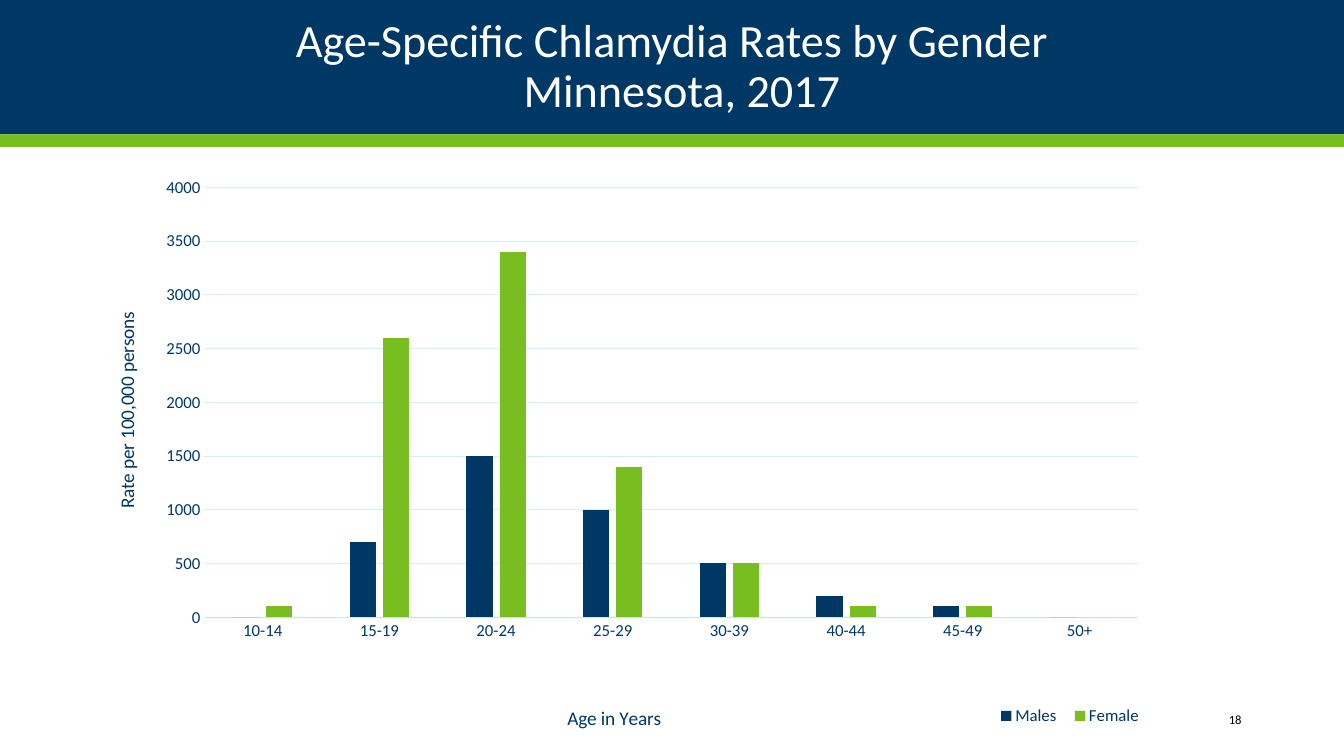
"""Build the slide on age-specific chlamydia rates by gender."""
from dataclasses import dataclass

from lxml import etree
from pptx import Presentation
from pptx.chart.data import CategoryChartData
from pptx.dml.color import RGBColor
from pptx.enum.chart import XL_CHART_TYPE, XL_LEGEND_POSITION, XL_TICK_MARK
from pptx.enum.shapes import MSO_SHAPE
from pptx.enum.text import MSO_ANCHOR, PP_ALIGN
from pptx.oxml.ns import qn
from pptx.util import Inches, Pt

CLUSTERED = XL_CHART_TYPE.COLUMN_CLUSTERED
LEGEND_BOTTOM = XL_LEGEND_POSITION.BOTTOM
NO_TICK = XL_TICK_MARK.NONE
RECTANGLE = MSO_SHAPE.RECTANGLE
MIDDLE = MSO_ANCHOR.MIDDLE
CENTER, RIGHT = PP_ALIGN.CENTER, PP_ALIGN.RIGHT

CELL = Inches(1 / 12)
COLUMNS, ROWS = 160, 90
FONT = "Calibri"
NAVY, GREEN, WHITE, BLACK = "003865", "78BE21", "FFFFFF", "000000"
AXIS_BLUE, GRID_BLUE = "C2E4FF", "D6EDFF"


@dataclass(frozen=True)
class Area:
    """Place on the slide in grid columns and rows."""
    column: float
    row: float
    columns: float
    rows: float

    def box(self) -> tuple:
        return tuple(round(n * CELL) for n in (self.column, self.row, self.columns, self.rows))


@dataclass(frozen=True)
class Band:
    area: Area
    color: str


@dataclass(frozen=True)
class Line:
    words: str
    indent: float = 0


@dataclass(frozen=True)
class Caption:
    area: Area
    lines: tuple
    size: float
    color: str
    align: PP_ALIGN


@dataclass(frozen=True)
class Gender:
    name: str
    rates: tuple
    color: str


BANDS = (
    Band(Area(0, 0, COLUMNS, 16), NAVY),
    Band(Area(0, 16, COLUMNS, 1.5), GREEN),
)
CAPTIONS = (
    Caption(Area(11, 2, 138, 12),
            (Line("Age-Specific Chlamydia Rates by Gender"), Line("Minnesota, 2017", 0.2)),
            33, WHITE, CENTER),
    Caption(Area(129.8, 83.4, 19.2, 4.8), (Line("18"),), 9, BLACK, RIGHT),
)
CHART_AREA = Area(11, 19.8, 127, 68.3)
AGES = ("10-14", "15-19", "20-24", "25-29", "30-39", "40-44", "45-49", "50+")
GENDERS = (
    Gender("Males", (0, 700, 1500, 1000, 500, 200, 100, 0), NAVY),
    Gender("Female", (100, 2600, 3400, 1400, 500, 100, 100, 0), GREEN),
)


def rgb(color: str) -> RGBColor:
    return RGBColor.from_string(color)


def style_font(font, size: float, color: str) -> None:
    font.name, font.size, font.bold = FONT, Pt(size), False
    font.color.rgb = rgb(color)


def style_line(line, color: str) -> None:
    line.color.rgb = rgb(color)
    line.width = Pt(0.75)


def draw_band(slide, band: Band) -> None:
    stripe = slide.shapes.add_shape(RECTANGLE, *band.area.box())
    stripe.shadow.inherit = False
    stripe.fill.solid()
    stripe.fill.fore_color.rgb = rgb(band.color)
    stripe.line.fill.background()


def draw_caption(slide, caption: Caption) -> None:
    frame = slide.shapes.add_textbox(*caption.area.box()).text_frame
    frame.word_wrap = True
    frame.vertical_anchor = MIDDLE
    for number, line in enumerate(caption.lines):
        paragraph = frame.add_paragraph() if number else frame.paragraphs[0]
        paragraph.text = line.words
        paragraph.alignment = caption.align
        paragraph.line_spacing = 0.9
        style_font(paragraph.font, caption.size, caption.color)
        if line.indent:
            paragraph._p.get_or_add_pPr().set("marL", str(Inches(line.indent)))


def place(part, **shares: float) -> None:
    """Set a chart part's place as shares of the chart's size."""
    for old in part.findall(qn("c:layout")):
        part.remove(old)
    layout = etree.Element(qn("c:layout"))
    manual = etree.SubElement(layout, qn("c:manualLayout"))
    settings = {"xMode": "edge", "yMode": "edge", **shares}
    if part.tag == qn("c:plotArea"):
        settings = {"layoutTarget": "inner", **settings}
    for key, setting in settings.items():
        etree.SubElement(manual, qn(f"c:{key}")).set("val", str(setting))
    overlay = part.find(qn("c:overlay"))
    part.insert(0 if overlay is None else part.index(overlay), layout)


def style_axis(axis, title: str, x: float, y: float) -> None:
    axis.major_tick_mark = axis.minor_tick_mark = NO_TICK
    style_font(axis.tick_labels.font, 12, NAVY)
    frame = axis.axis_title.text_frame
    frame.text = title
    style_font(frame.paragraphs[0].font, 13.8, NAVY)
    place(axis.axis_title._element, x=x, y=y)


def draw_chart(slide) -> None:
    rates = CategoryChartData(number_format="General")
    rates.categories = AGES
    for gender in GENDERS:
        rates.add_series(gender.name, gender.rates)
    chart = slide.shapes.add_chart(CLUSTERED, *CHART_AREA.box(), rates).chart
    chart.has_title = False
    style_font(chart.font, 10, NAVY)

    columns = chart.plots[0]
    columns.gap_width, columns.overlap = 219, -27
    columns.vary_by_categories = False
    for series, gender in zip(columns.series, GENDERS):
        series.format.fill.solid()
        series.format.fill.fore_color.rgb = rgb(gender.color)
        series.invert_if_negative = False
    place(chart._chartSpace.chart.plotArea, x=0.105, y=0.037, w=0.875, h=0.749)

    ages, rate_axis = chart.category_axis, chart.value_axis
    style_axis(ages, "Age in Years", 0.442, 0.934)
    style_line(ages.format.line, AXIS_BLUE)
    style_axis(rate_axis, "Rate per 100,000 persons", 0.017, 0.248)
    turned = rate_axis.axis_title.text_frame._txBody.bodyPr
    turned.set("rot", "-5400000")
    turned.set("vert", "horz")
    rate_axis.minimum_scale, rate_axis.maximum_scale, rate_axis.major_unit = 0, 4000, 500
    rate_axis.format.line.fill.background()
    style_line(rate_axis.major_gridlines.format.line, GRID_BLUE)

    chart.has_legend = True
    chart.legend.position = LEGEND_BOTTOM
    chart.legend.include_in_layout = False
    style_font(chart.legend.font, 12, NAVY)
    place(chart.legend._element, x=0.84, y=0.933, w=0.153, h=0.05)


def main() -> None:
    deck = Presentation()
    deck.slide_width, deck.slide_height = COLUMNS * CELL, ROWS * CELL
    slide = deck.slides.add_slide(deck.slide_layouts[6])
    for band in BANDS:
        draw_band(slide, band)
    for caption in CAPTIONS:
        draw_caption(slide, caption)
    draw_chart(slide)
    deck.save("out.pptx")


if __name__ == "__main__":
    main()
